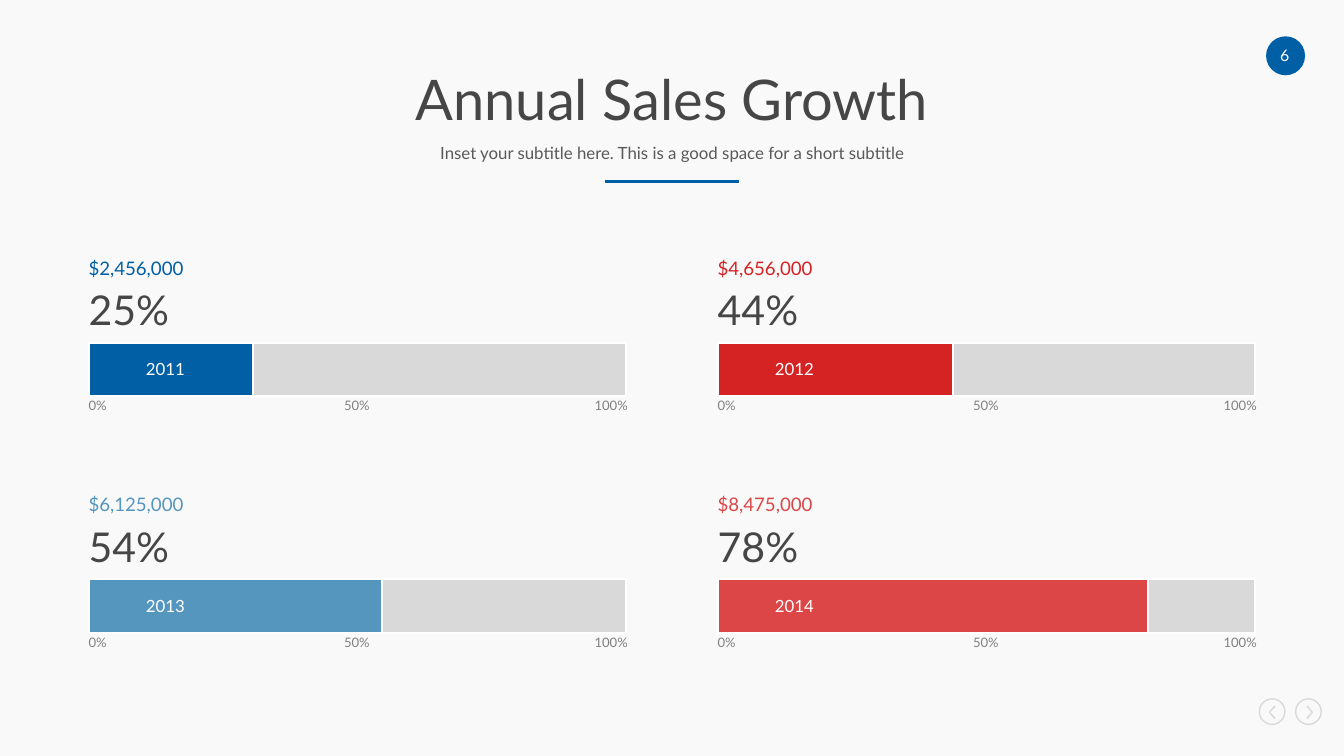
"""Build the annual sales growth slide with four yearly progress bars."""
from lxml.etree import SubElement
from pptx import Presentation
from pptx.dml.color import RGBColor as RGB
from pptx.enum.shapes import MSO_CONNECTOR as LINK, MSO_SHAPE as SHAPE
from pptx.enum.text import MSO_ANCHOR as ANCHOR, PP_ALIGN as ALIGN
from pptx.oxml.ns import qn
from pptx.util import Inches, Pt

HUES = {
    "back": "F9F9F9", "white": "FFFFFF", "dark": "464646", "sub": "595959",
    "tick": "808080", "track": "D9D9D9", "blue": "005FA5", "red": "D52323",
    "sky": "5596BE", "rose": "DC4646",
}
HUES = {name: RGB.from_string(code) for name, code in HUES.items()}


def text(words, home, at, size, hue, align=ALIGN.LEFT, anchor=ANCHOR.TOP):
    """Add one line of text."""
    frame = home.add_textbox(*map(Inches, at)).text_frame
    frame.margin_left = frame.margin_right = 0
    frame.margin_top = frame.margin_bottom = 0
    frame.word_wrap = True
    frame.vertical_anchor = anchor
    line = frame.paragraphs[0]
    line.alignment = align
    run = line.add_run()
    run.text = words
    run.font.name = "Lato"
    run.font.size = Pt(size)
    run.font.color.rgb = HUES[hue]


def paint(shape, fill=None, line=None, width=1):
    """Set the fill and outline of a shape."""
    shape.shadow.inherit = False
    if fill:
        shape.fill.solid()
        shape.fill.fore_color.rgb = HUES[fill]
    else:
        shape.fill.background()
    if line:
        shape.line.color.rgb = HUES[line]
        shape.line.width = Pt(width)
    else:
        shape.line.fill.background()


deck = Presentation()
deck.slide_width = Inches(10)
deck.slide_height = Inches(10 * 9 / 16)
slide = deck.slides.add_slide(deck.slide_layouts[6])
slide.background.fill.solid()
slide.background.fill.fore_color.rgb = HUES["back"]
shapes = slide.shapes

rule = shapes.add_connector(
    LINK.STRAIGHT, Inches(4.5), Inches(1.35), Inches(5.5), Inches(1.35))
rule.line.color.rgb = HUES["blue"]
rule.line.width = Pt(1.5)
SubElement(rule.element.spPr, qn("a:effectLst"))

CHEVRON = [(0, 0), (4, -5), (5, -4), (1, 0), (5, 4), (4, 5)]
for left, tip, way in [(9.37, 9.44, 1), (9.64, 9.77, -1)]:
    ring = shapes.add_shape(
        SHAPE.OVAL, Inches(left), Inches(5.2), Inches(0.19), Inches(0.19))
    paint(ring, line="track", width=0.75)
    spots = [(Inches(tip + way * x / 100), Inches(5.3 + y / 100))
             for x, y in CHEVRON]
    pen = shapes.build_freeform(*spots[0])
    pen.add_line_segments(spots[1:])
    paint(pen.convert_to_shape(), fill="track")

badge = shapes.add_shape(
    SHAPE.OVAL, Inches(9.42), Inches(0.27), Inches(0.29), Inches(0.29))
paint(badge, fill="blue")
text("6", shapes, (9.44, 0.34, 0.24, 0.14), 8.5, "white", ALIGN.CENTER)

text("Annual Sales Growth", shapes, (0.65, 0.48, 8.7, 0.5), 30, "dark",
     ALIGN.CENTER, ANCHOR.MIDDLE)
text("Inset your subtitle here. This is a good space for a short subtitle",
     shapes, (0.65, 1.01, 8.7, 0.25), 9, "sub", ALIGN.CENTER, ANCHOR.MIDDLE)

YEARS = [
    ("2011", "$2,456,000", "25%", 1.22, "blue"),
    ("2012", "$4,656,000", "44%", 1.75, "red"),
    ("2013", "$6,125,000", "54%", 2.18, "sky"),
    ("2014", "$8,475,000", "78%", 3.2, "rose"),
]
TICKS = [("0%", 0, ALIGN.LEFT), ("100%", 3.66, ALIGN.RIGHT),
         ("50%", 1.82, ALIGN.CENTER)]
for spot, (year, sales, share, width, hue) in enumerate(YEARS):
    row, col = divmod(spot, 2)
    x, y = 0.66 + 4.68 * col, 1.91 + 1.76 * row
    group = shapes.add_group_shape().shapes
    for span, fill in [(4, "track"), (width, hue)]:
        bar = group.add_shape(SHAPE.RECTANGLE, Inches(x), Inches(y + 0.64),
                              Inches(span), Inches(0.4))
        paint(bar, fill, "white")
    text(share, group, (x, y + 0.21, 1.01, 0.39), 22, "dark")
    text(sales, group, (x, y, 0.8, 0.17), 10, hue)
    text(year, group, (x + 0.32, y + 0.76, 0.5, 0.15), 9, "white", ALIGN.CENTER)
    for label, shift, align in TICKS:
        text(label, group, (x + shift, y + 1.05, 0.35, 0.14), 7, "tick", align)

deck.save("out.pptx")
